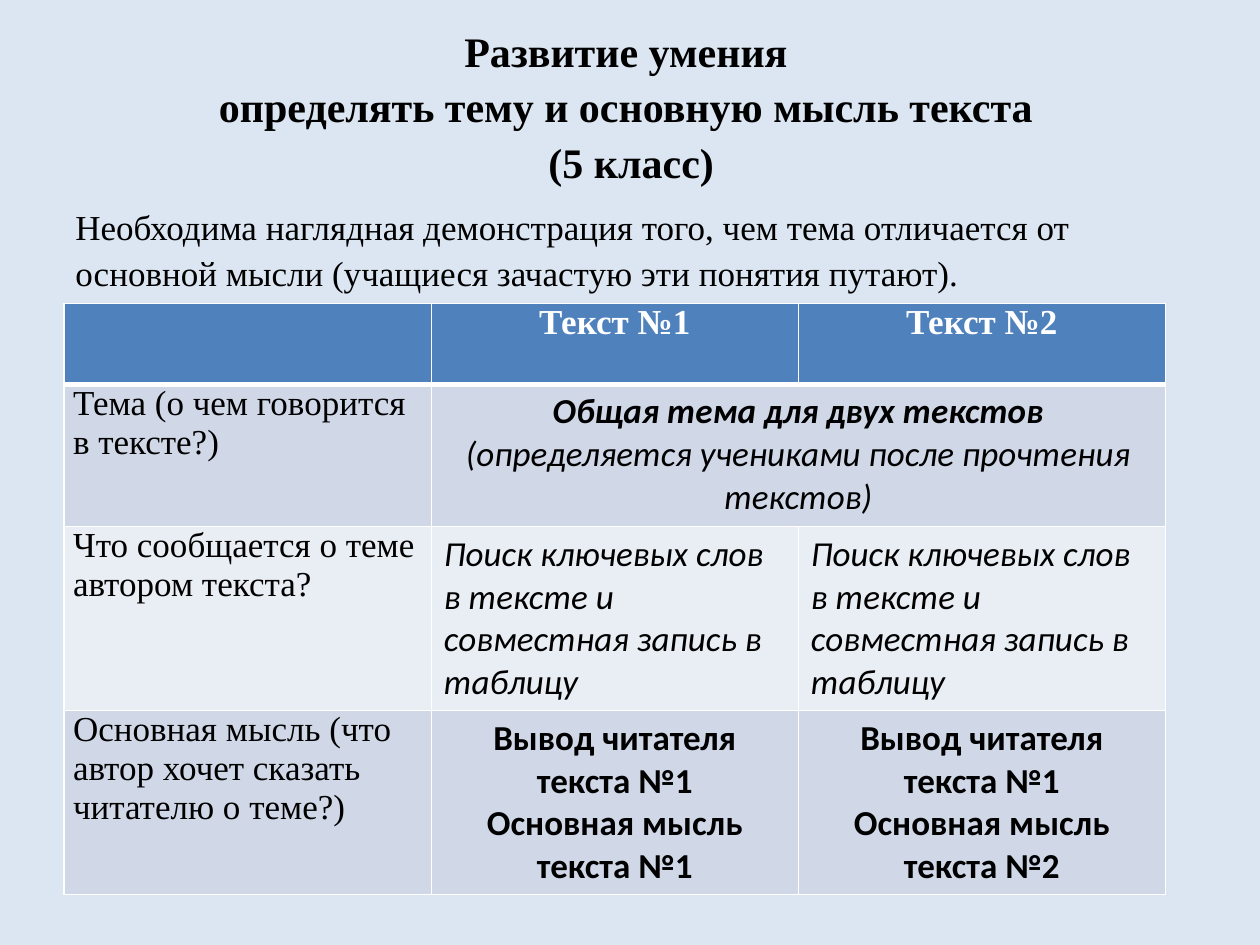
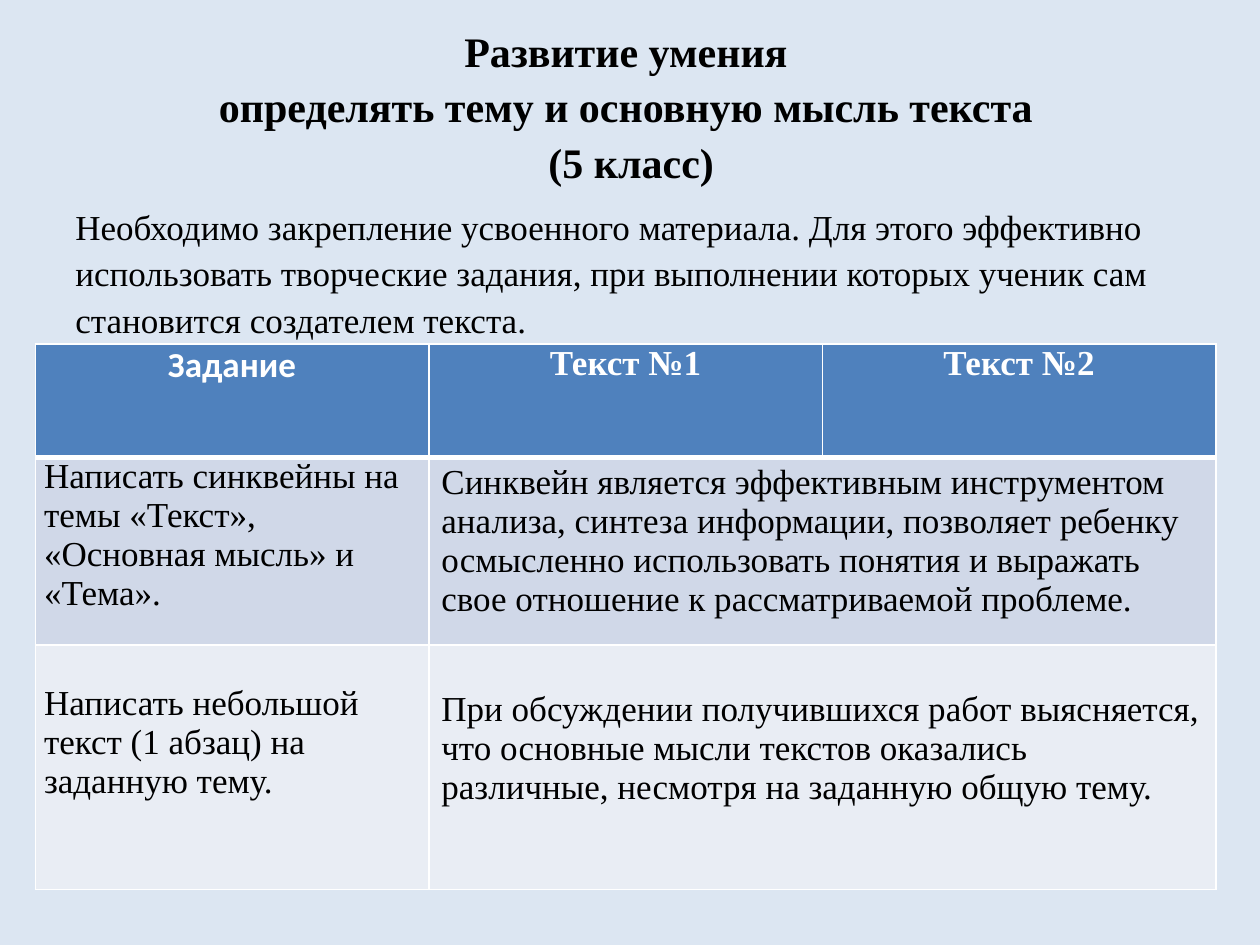
from lxml import etree
from pptx import Presentation
from pptx.dml.color import RGBColor
from pptx.enum.text import MSO_ANCHOR, PP_ALIGN
from pptx.oxml.ns import qn
from pptx.util import Inches, Pt

CENTER, LEFT = PP_ALIGN.CENTER, PP_ALIGN.LEFT
MIDDLE, TOP = MSO_ANCHOR.MIDDLE, MSO_ANCHOR.TOP
SERIF, SANS = "Times New Roman", "Calibri"
C = {
    "background": "DCE6F2",
    "header": "4F81BD",
    "odd": "D0D8E8",
    "even": "E9EDF4",
    "white": "FFFFFF",
    "black": "000000",
}

TITLE = ["Развитие умения ", "определять тему и основную мысль текста ", "(5 класс)"]
TEXT_HEADS = [("Текст №1", SERIF, "b"), ("Текст №2", SERIF, "b")]
KEYWORDS = ("Поиск ключевых слов в тексте и совместная запись в таблицу", SANS, "i")
CONCLUSION = ("Вывод читателя текста №1", SANS, "b")

# A cell is a list of paragraphs, a paragraph a list of (text, font, style) runs;
# None is a cell covered by the merged one on its left.
SLIDES = [
    {
        "intro": "Необходима наглядная демонстрация того, чем тема отличается от "
                 "основной мысли (учащиеся зачастую эти понятия путают).",
        "left": 5.1, "top": 32.13, "width": 87.4,
        "rows": [8.53, 15.07, 19.47, 19.47],
        "centered": [(1, 1), (3, 1), (3, 2)],
        "lowered": [],
        "cells": [
            [[]] + [[[head]] for head in TEXT_HEADS],
            [[[("Тема (о чем говорится в тексте?)", SERIF, "")]],
             [[("Общая тема для двух текстов ", SANS, "bi"),
               ("(определяется учениками после прочтения текстов)", SANS, "i")]],
             None],
            [[[("Что сообщается о теме автором текста?", SERIF, "")]],
             [[KEYWORDS]], [[KEYWORDS]]],
            [[[("Основная мысль (что автор хочет сказать читателю о теме?)", SERIF, "")]],
             [[CONCLUSION], [("Основная мысль текста №1", SANS, "b")]],
             [[CONCLUSION], [("Основная мысль текста №2", SANS, "b")]]],
        ],
    },
    {
        "intro": "Необходимо закрепление усвоенного материала. Для этого эффективно "
                 "использовать творческие задания, при выполнении которых ученик сам "
                 "становится создателем текста.",
        "left": 2.8, "top": 36.4, "width": 93.7,
        "rows": [12, 19.87, 25.87],
        "centered": [],
        "lowered": [2],
        "cells": [
            [[[("Задание", SANS, "b")]]] + [[[head]] for head in TEXT_HEADS],
            [[[("Написать синквейны на темы «Текст», «Основная мысль» и «Тема».", SERIF, "")]],
             [[("Синквейн является эффективным инструментом анализа, синтеза "
                "информации, позволяет ребенку осмысленно использовать понятия и "
                "выражать свое отношение к рассматриваемой проблеме.", SERIF, "")]],
             None],
            [[[("Написать небольшой текст (1 абзац) на заданную тему.", SERIF, "")]],
             [[("При обсуждении получившихся работ выясняется, что основные мысли "
                "текстов оказались различные, несмотря на заданную общую тему.", SERIF, "")]],
             None],
        ],
    },
]

prs = Presentation()
prs.slide_width, prs.slide_height = Inches(10), Inches(7.5)
X, Y = prs.slide_width / 100, prs.slide_height / 100  # one percent of the slide


def add_run(p, text, size, font=SERIF, style="", color="black"):
    r = p.add_run()
    r.text = text
    r.font.name, r.font.size = font, Pt(size)
    r.font.bold, r.font.italic = "b" in style, "i" in style
    r.font.color.rgb = RGBColor.from_string(C[color])


def add_textbox(s, left, top, width, height, anchor, align):
    """Add a text box placed in percents of the slide; return its first paragraph."""
    sp = s.shapes.add_textbox(*(int(v) for v in (left * X, top * Y, width * X, height * Y)))
    tf = sp.text_frame
    tf.word_wrap, tf.vertical_anchor = True, anchor
    p = tf.paragraphs[0]
    p.alignment, p.line_spacing = align, 1.1
    return p


for data in SLIDES:
    s = prs.slides.add_slide(prs.slide_layouts[6])
    s.background.fill.solid()
    s.background.fill.fore_color.rgb = RGBColor.from_string(C["background"])

    p = add_textbox(s, 5.1, 0, 90, 21.87, MIDDLE, CENTER)
    for i, line in enumerate(TITLE):
        if i:
            p.add_line_break()
        add_run(p, line, 24, style="b")
    p = add_textbox(s, 5, 20.67, 90, 22, TOP, LEFT)
    add_run(p, data["intro"], 20)

    rows = data["rows"]
    table = s.shapes.add_table(
        len(rows), 3, int(data["left"] * X), int(data["top"] * Y),
        int(data["width"] * X), int(sum(rows) * Y)).table
    for column in table.columns:
        column.width = int(data["width"] * X / 3)

    for i, cells in enumerate(data["cells"]):
        table.rows[i].height = int(rows[i] * Y)
        header = i == 0
        for j, paragraphs in enumerate(cells):
            cell = table.cell(i, j)
            cell.fill.solid()
            fill = "header" if header else "odd" if i % 2 else "even"
            cell.fill.fore_color.rgb = RGBColor.from_string(C[fill])
            tcPr = cell._tc.get_or_add_tcPr()
            for k, side in enumerate(("lnL", "lnR", "lnT", "lnB")):
                thick = (header and side == "lnB") or (i == 1 and side == "lnT")
                ln = etree.Element(qn(f"a:{side}"), w=str(Pt(3 if thick else 1)))
                solid = etree.SubElement(ln, qn("a:solidFill"))
                etree.SubElement(solid, qn("a:srgbClr"), val=C["white"])
                tcPr.insert(k, ln)
            if paragraphs is None:
                table.cell(i, j - 1).merge(cell)
                continue

            tight = header or j == 0
            cell.margin_left = cell.margin_right = Inches(0.07 if tight else 0.1)
            cell.margin_bottom = Inches(0 if tight else 0.05)
            cell.margin_top = cell.margin_bottom + Inches(0.31 if i in data["lowered"] else 0)
            tf = cell.text_frame
            for n, runs in enumerate(paragraphs):
                p = tf.add_paragraph() if n else tf.paragraphs[0]
                p.alignment = CENTER if header or (i, j) in data["centered"] else LEFT
                for text, font, style in runs:
                    add_run(p, text, 20, font, style, "white" if header else "black")

prs.save("out.pptx")
